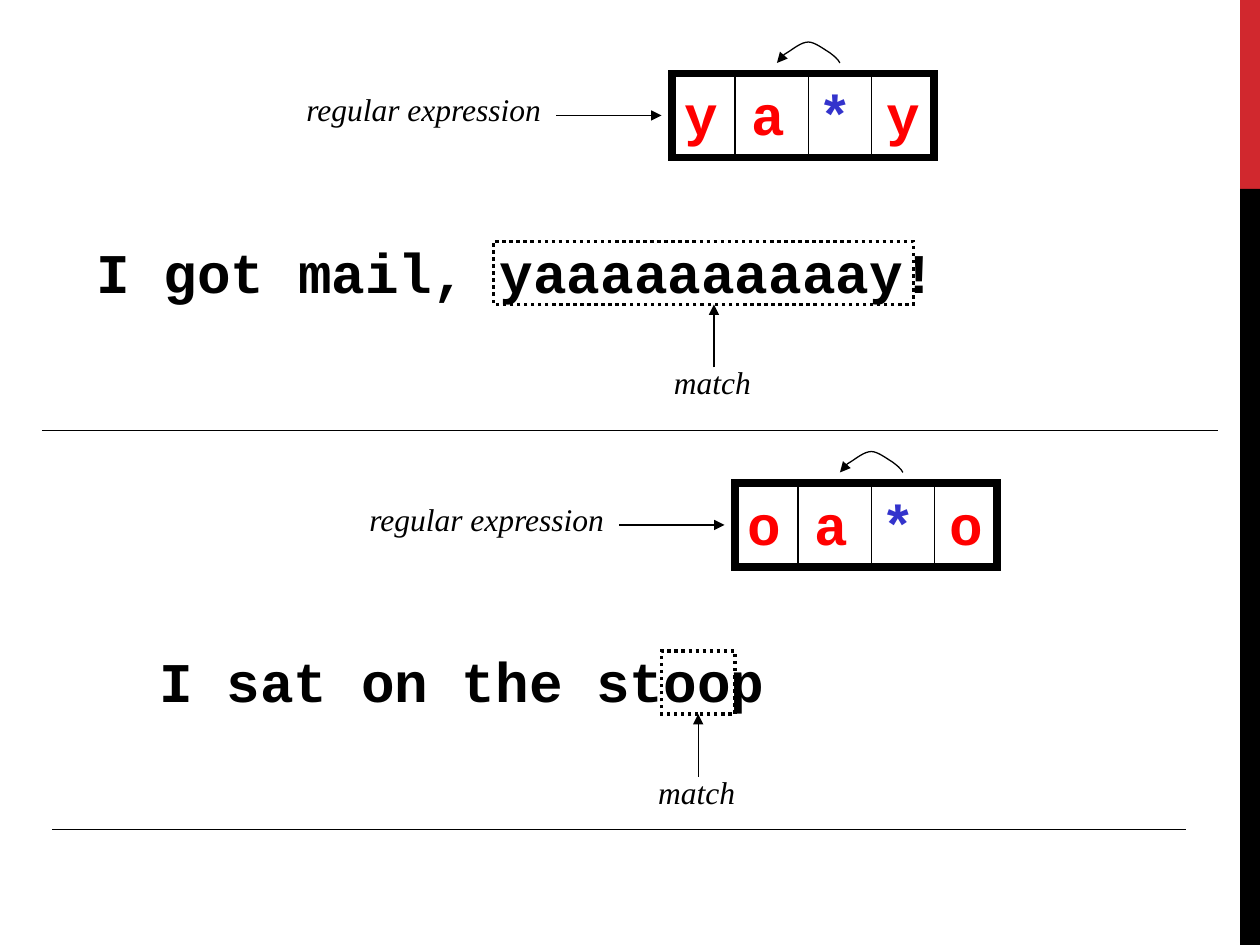
from dataclasses import dataclass

from lxml.etree import SubElement
from pptx import Presentation
from pptx.dml.color import RGBColor
from pptx.enum.dml import MSO_LINE
from pptx.enum.shapes import MSO_CONNECTOR, MSO_SHAPE
from pptx.enum.text import MSO_AUTO_SIZE
from pptx.oxml.ns import qn
from pptx.util import Inches, Pt

BLACK = RGBColor(0x00, 0x00, 0x00)
RED = RGBColor(0xFF, 0x00, 0x00)
BLUE = RGBColor(0x33, 0x33, 0xCC)
ACCENT = RGBColor(0xD1, 0x28, 0x2E)

COLUMNS, ROWS = 120, 90  # grid of twelfths of an inch
BOTTOM_SIDE = 2
CODE = {"name": "Courier New", "size": Pt(32), "bold": True}
LABEL = {"name": "Times New Roman", "size": Pt(18), "italic": True}
LOOP_BACK = [(6, 2), (5.8, 1.6), (5.4, 1.3), (5, 1), (4.5, 0.7), (3.6, 0), (3, 0),
             (2.3, 0), (1.5, 0.7), (1, 1), (0.5, 1.3), (0.1, 1.9), (0, 2)]


@dataclass
class Example:
    column: float
    row: float
    letter: str
    sentence: str
    match_column: float
    match_width: float
    pointer_column: float


EXAMPLES = [
    Example(8, 4, "y", "I got mail, yaaaaaaaaaay!", 47, 40, 68),
    Example(14, 43, "o", "I sat on the stoop", 63, 7, 66.5),
]


def grid(*cells: float) -> list:
    return [Inches(cell / 12) for cell in cells]


def add_text(page, place: tuple, spans: list, style: dict, wrap: bool) -> None:
    frame = page.shapes.add_textbox(*grid(*place)).text_frame
    frame.word_wrap = wrap
    frame.auto_size = MSO_AUTO_SIZE.SHAPE_TO_FIT_TEXT
    para = frame.paragraphs[0]
    space = SubElement(para._p.get_or_add_pPr(), qn("a:spcBef"))
    SubElement(space, qn("a:spcPct"), val="50000")
    for text, color in spans:
        span = para.add_run()
        span.text = text
        span.font.color.rgb = color
        for name, value in style.items():
            setattr(span.font, name, value)


def style_line(shape, arrow: bool) -> None:
    shape.line.color.rgb = BLACK
    shape.line.width = Pt(0.75)
    if arrow:
        SubElement(shape.line._get_or_add_ln(), qn("a:tailEnd"), type="triangle")


def add_line(page, start: tuple, end: tuple, arrow: bool = False):
    line = page.shapes.add_connector(MSO_CONNECTOR.STRAIGHT, *grid(*start, *end))
    style_line(line, arrow)
    SubElement(line._element.spPr, qn("a:effectLst"))
    return line


def add_bar(page, place: tuple, color: RGBColor) -> None:
    bar = page.shapes.add_shape(MSO_SHAPE.RECTANGLE, *grid(*place))
    bar.shadow.inherit = False
    bar.fill.solid()
    bar.fill.fore_color.rgb = color
    bar.line.fill.background()


def add_frame(page, place: tuple, width: float, dash=None):
    """Draw an unfilled rectangle with sharp corners."""
    box = page.shapes.add_shape(MSO_SHAPE.RECTANGLE, *grid(*place))
    box.shadow.inherit = False
    box.fill.background()
    box.line.color.rgb = BLACK
    box.line.width = Pt(width)
    if dash:
        box.line.dash_style = dash
    SubElement(box.line._get_or_add_ln(), qn("a:miter"), lim="800000")
    return box


def add_curve(page, column: float, row: float, points: list) -> None:
    """Draw an arrow whose points after the first are Bezier triples."""
    start, *rest = [tuple(grid(column + x, row + y)) for x, y in points]
    builder = page.shapes.build_freeform(*start)
    builder.add_line_segments(rest, close=False)
    curve = builder.convert_to_shape()
    curve.shadow.inherit = False
    curve.fill.background()
    style_line(curve, arrow=True)
    outline = curve._element.find(".//" + qn("a:path"))
    segments = outline.findall(qn("a:lnTo"))
    for first in range(0, len(segments), 3):
        bezier = SubElement(outline, qn("a:cubicBezTo"))
        for segment in segments[first:first + 3]:
            bezier.append(segment[0])
            outline.remove(segment)


def add_pattern(page, example: Example) -> None:
    left, top = example.column + 56, example.row + 3
    add_text(page, (left - 36, top + 1, 25, 4.8),
             [("regular expression", BLACK)], LABEL, wrap=False)
    add_line(page, (left - 11, top + 4), (left - 1, top + 4), arrow=True)
    add_frame(page, (left, top, 25, 8), 4.5)
    spans = [(f"{example.letter} a ", RED), ("*", BLUE), (f" {example.letter}", RED)]
    add_text(page, (left, top, 42, 7.5), spans, CODE, wrap=True)
    for divider in (6, 13, 19):
        add_line(page, (left + divider, top), (left + divider, top + 8))
    add_curve(page, left + 10, example.row, LOOP_BACK)


def add_match(page, example: Example) -> None:
    top, pointer = example.row + 19, example.pointer_column
    add_text(page, (example.column, top - 1, 95 - example.column, 7.5),
             [(example.sentence, BLACK)], CODE, wrap=True)
    box = add_frame(page, (example.match_column, top, example.match_width, 6),
                    2, MSO_LINE.ROUND_DOT)
    add_text(page, (pointer - 5, top + 11, 9.7, 4.8), [("match", BLACK)], LABEL, wrap=False)
    arrow = add_line(page, (pointer, top + 12), (pointer, top + 6), arrow=True)
    if pointer == example.match_column + example.match_width / 2:
        arrow.end_connect(box, BOTTOM_SIDE)


def main() -> None:
    deck = Presentation()
    deck.slide_width, deck.slide_height = grid(COLUMNS, ROWS)
    page = deck.slides.add_slide(deck.slide_layouts[6])
    add_bar(page, (118.1, 0, 1.9, 18), ACCENT)
    add_bar(page, (118.1, 18, 1.9, 72), BLACK)
    for example in EXAMPLES:
        add_pattern(page, example)
        add_match(page, example)
    add_line(page, (4, 41), (116, 41))
    add_line(page, (5, 79), (113, 79))
    deck.save("out.pptx")


if __name__ == "__main__":
    main()
